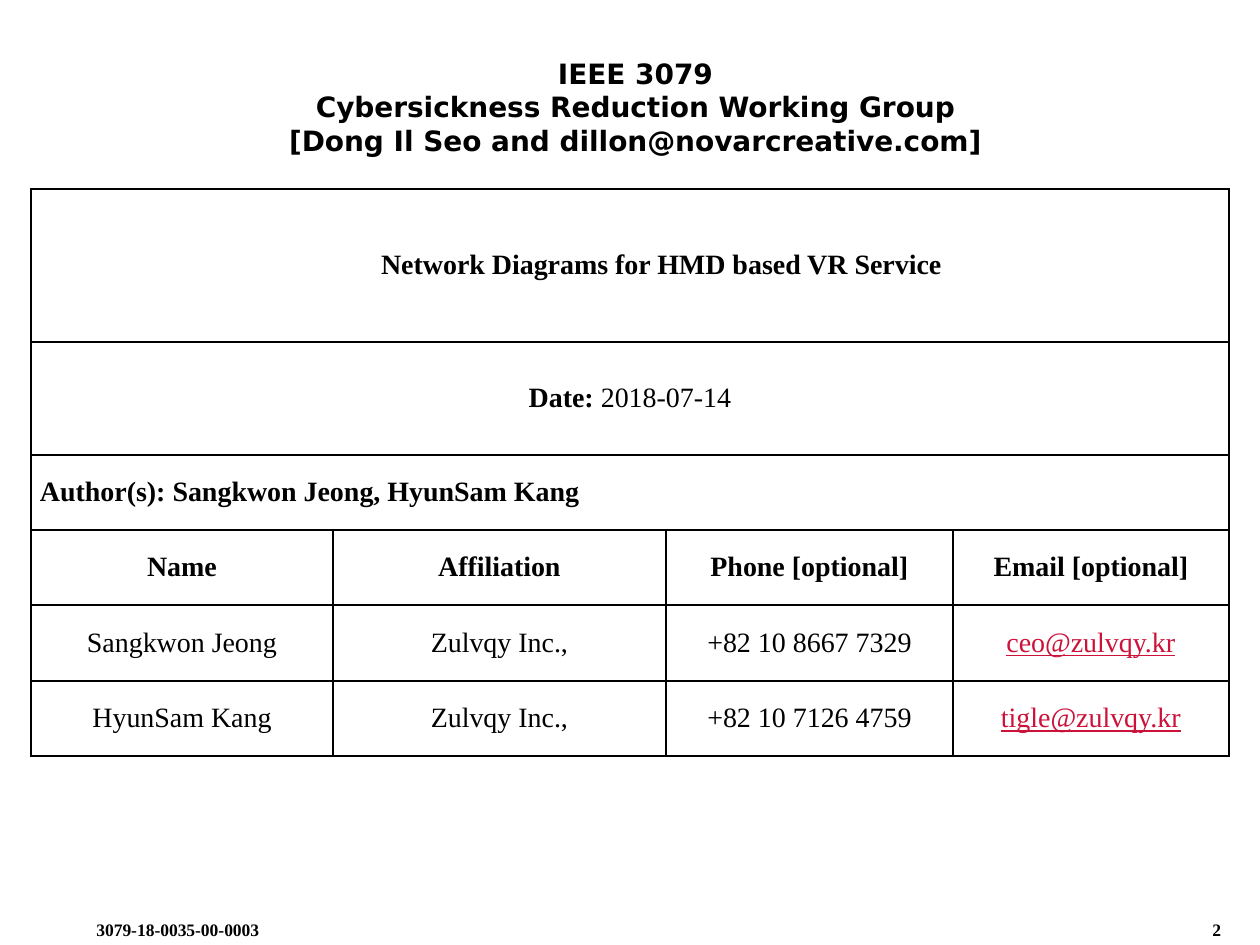
from lxml.etree import SubElement
from pptx import Presentation
from pptx.dml.color import RGBColor
from pptx.enum.text import MSO_ANCHOR, MSO_AUTO_SIZE, PP_ALIGN
from pptx.oxml.ns import qn
from pptx.util import Inches, Pt

SCALE = Inches(1) / 126
COLORS = {"text": "000000", "line": "000000", "link": "CC1239"}
TITLE_FONT, BODY_FONT = "DejaVu Sans", "Times New Roman"

TITLE_LINES = [
    "IEEE 3079",
    "Cybersickness Reduction Working Group",
    "[Dong Il Seo and dillon@novarcreative.com]",
]
COLUMN_WIDTHS = [302, 333, 287, 276]
ROW_HEIGHTS = [153, 113, 75, 75, 76, 75]
HEADERS = ["Name", "Affiliation", "Phone [optional]", "Email [optional]"]
AUTHORS = [
    ["Sangkwon Jeong", "Zulvqy Inc.,", "+82 10 8667 7329", "ceo@zulvqy.kr"],
    ["HyunSam Kang", "Zulvqy Inc.,", "+82 10 7126 4759", "tigle@zulvqy.kr"],
]


def px(length):
    return round(length * SCALE)


def style_font(font, name, size, bold=None, color="text"):
    font.name = name
    font.size = Pt(size)
    font.bold = bold
    font.color.rgb = RGBColor.from_string(COLORS[color])


def add_title(page, left, top, width, height):
    title = page.shapes.title
    title.left, title.top, title.width, title.height = map(px, (left, top, width, height))
    frame = title.text_frame
    frame.text = "\n".join(TITLE_LINES)
    frame.word_wrap = True
    frame.auto_size = MSO_AUTO_SIZE.SHAPE_TO_FIT_TEXT
    frame.vertical_anchor = MSO_ANCHOR.MIDDLE
    for para in frame.paragraphs:
        para.alignment = PP_ALIGN.CENTER
        style_font(para.font, TITLE_FONT, 16, True)


def add_footer(page, text, left, width):
    box = page.shapes.add_textbox(px(left), px(913), px(width), px(32))
    box.text_frame.word_wrap = True
    para = box.text_frame.paragraphs[0]
    para.text = text
    style_font(para.font, BODY_FONT, 10, True)


def format_cell(cell):
    cell.fill.background()
    cell.vertical_anchor = MSO_ANCHOR.MIDDLE
    cell.margin_left = cell.margin_right = px(9)
    cell.margin_top = cell.margin_bottom = 0
    # Border lines must come before the fill
    properties = cell._tc.get_or_add_tcPr()
    for index, side in enumerate(("lnL", "lnR", "lnT", "lnB")):
        line = SubElement(properties, qn(f"a:{side}"), w=str(Pt(1)))
        fill = SubElement(line, qn("a:solidFill"))
        SubElement(fill, qn("a:srgbClr"), val=COLORS["line"])
        properties.insert(index, line)


def write_cell(cell, text, bold=False, align=PP_ALIGN.CENTER, color="text"):
    para = cell.text_frame.paragraphs[0]
    para.alignment = align
    para.text = text
    style_font(para.font, BODY_FONT, 16, bold, color)
    return para


def add_document_table(page, left, top):
    table = page.shapes.add_table(
        len(ROW_HEIGHTS), len(COLUMN_WIDTHS), px(left), px(top),
        px(sum(COLUMN_WIDTHS)), px(sum(ROW_HEIGHTS))).table
    table.first_row = table.horz_banding = False
    for column, width in zip(table.columns, COLUMN_WIDTHS):
        column.width = px(width)
    for row, height in zip(table.rows, ROW_HEIGHTS):
        row.height = px(height)
        for cell in row.cells:
            format_cell(cell)

    # Full-width rows: subject, date, authors
    for index in range(3):
        table.cell(index, 0).merge(table.cell(index, len(COLUMN_WIDTHS) - 1))
    subject = write_cell(table.cell(0, 0), "Network Diagrams for HMD based VR Service", True)
    subject._p.get_or_add_pPr().set("marL", str(px(63)))
    date = write_cell(table.cell(1, 0), "Date:", None)
    date.runs[0].font.bold = True
    date.add_run().text = " 2018-07-14"
    for para in (subject, date):
        para.space_after = Pt(12)
    write_cell(table.cell(2, 0), "Author(s): Sangkwon Jeong, HyunSam Kang", True, PP_ALIGN.LEFT)

    # Author details
    for column, header in enumerate(HEADERS):
        write_cell(table.cell(3, column), header, True)
    for row, author in enumerate(AUTHORS, start=4):
        for column, text in enumerate(author):
            is_email = "@" in text
            para = write_cell(table.cell(row, column), text,
                              color="link" if is_email else "text")
            if is_email:
                para.font.underline = True


def main():
    deck = Presentation()
    deck.slide_width, deck.slide_height = Inches(10), Inches(7.5)
    page = deck.slides.add_slide(deck.slide_layouts[5])
    add_document_table(page, 31, 189)
    add_title(page, 105, 49, 1061, 115)
    add_footer(page, "3079-18-0035-00-0003", 84, 662)
    add_footer(page, "2", 1200, 60)
    deck.save("out.pptx")


if __name__ == "__main__":
    main()
